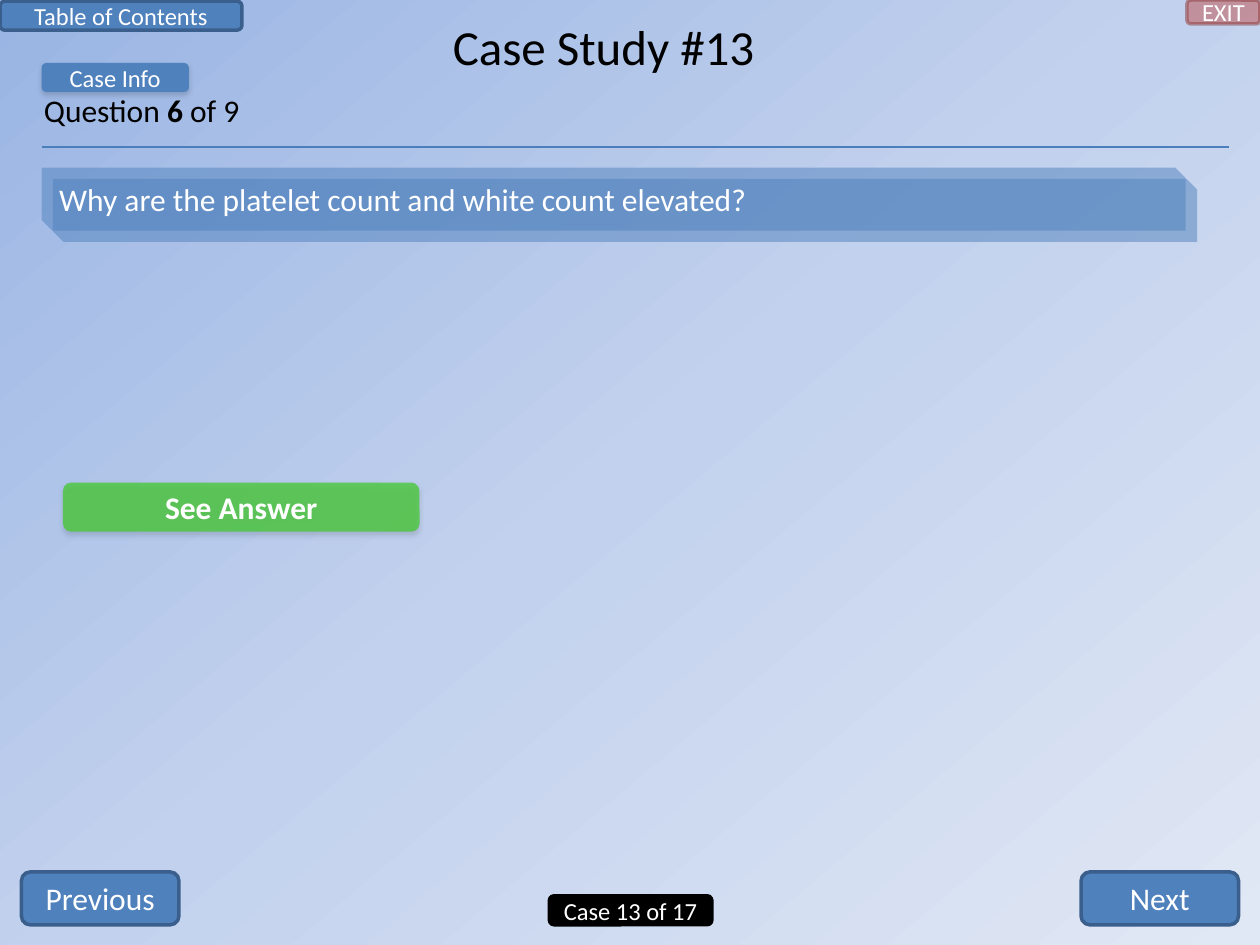
from copy import deepcopy
from lxml.etree import SubElement
from pptx import Presentation
from pptx.dml.color import RGBColor
from pptx.enum.shapes import MSO_CONNECTOR, MSO_SHAPE
from pptx.enum.text import MSO_ANCHOR, MSO_AUTO_SIZE, PP_ALIGN
from pptx.oxml.ns import qn
from pptx.util import Inches, Pt

THEME = {
    "font": "Calibri", "title": 28, "body": 18, "small": 14,
    "black": "000000", "white": "FFFFFF", "blue": "4F81BD", "blue edge": "3A5F8C",
    "rule": "4B7EBC", "red": "C0504D", "red edge": "8E3B39", "green": "48C937",
    "background": [(0, "9AB5E4"), (50, "C2D1ED"), (100, "E1E8F5")],
}


def write(frame, pieces, size, color, align=PP_ALIGN.CENTER):
    """Fill a frame with one paragraph of (text, bold) pieces."""
    para = frame.paragraphs[0]
    para.alignment = align
    for text, bold in pieces:
        span = para.add_run()
        span.text = text
        span.font.name, span.font.size = THEME["font"], Pt(THEME[size])
        span.font.bold = bold
        span.font.color.rgb = RGBColor.from_string(THEME[color])


def add_panel(kind, bounds, fill, edge=None, fill_alpha=100, edge_alpha=100, raised=False):
    """Add a preset shape, optionally see-through or with a soft shadow."""
    panel = page.shapes.add_shape(kind, *(Inches(length) for length in bounds))
    panel.shadow.inherit = False
    panel.fill.solid()
    panel.fill.fore_color.rgb = RGBColor.from_string(THEME[fill])
    if edge:
        panel.line.color.rgb = RGBColor.from_string(THEME[edge])
        panel.line.width = Pt(2)
    else:
        panel.line.fill.background()
    properties = panel.element.spPr
    for owner, alpha in ((properties, fill_alpha), (properties.find(qn("a:ln")), edge_alpha)):
        if alpha < 100:
            color = owner.find(qn("a:solidFill"))[0]
            SubElement(color, qn("a:alpha"), val=str(alpha * 1000))
    if raised:
        effects = properties.find(qn("a:effectLst"))
        shadow = SubElement(effects, qn("a:outerShdw"), blurRad=str(Pt(3.1)),
                            dist=str(Pt(1.8)), dir="5400000", rotWithShape="0")
        color = SubElement(shadow, qn("a:srgbClr"), val=THEME["black"])
        SubElement(color, qn("a:alpha"), val="16000")
    panel.text_frame.vertical_anchor = MSO_ANCHOR.MIDDLE
    return panel


deck = Presentation()
deck.slide_width, deck.slide_height = Inches(10), Inches(7.5)
page = deck.slides.add_slide(deck.slide_layouts[5])

# Background gradient
backdrop = page.background.fill
backdrop.gradient()
backdrop.gradient_angle = 310
stops = next(page.element.iter(qn("a:gsLst")))
stops.insert(1, deepcopy(stops[0]))
for stop, (position, color) in zip(backdrop.gradient_stops, THEME["background"]):
    stop.position = position / 100
    stop.color.rgb = RGBColor.from_string(color)

# Title
title = page.shapes.title
title.left, title.top = Inches(2.58), Inches(0.08)
title.width, title.height = Inches(4.42), Inches(0.57)
title.text_frame.auto_size = MSO_AUTO_SIZE.NONE
title.text_frame.vertical_anchor = MSO_ANCHOR.TOP
write(title.text_frame, [("Case Study #13", False)], "title", "black")

# Question counter and rule
counter = page.shapes.add_textbox(Inches(0.25), Inches(0.67), Inches(1.77), Inches(0.71))
counter.text_frame.word_wrap = False
write(counter.text_frame, [("Question ", False), ("6", True), (" of 9", False)],
      "body", "black", PP_ALIGN.LEFT)
rule = page.shapes.add_connector(MSO_CONNECTOR.STRAIGHT, Inches(0.33), Inches(1.17),
                                 Inches(9.75), Inches(1.17))
rule.line.color.rgb = RGBColor.from_string(THEME["rule"])
rule.line.width = Pt(1.25)
SubElement(rule.element.spPr, qn("a:effectLst"))

# Question on two overlapping panels
for left, top in ((0.42, 1.42), (0.33, 1.33)):
    question = add_panel(MSO_SHAPE.SNIP_2_DIAG_RECTANGLE, (left, top, 9.08, 0.5),
                         "blue", fill_alpha=50)
write(question.text_frame, [("Why are the platelet count and white count elevated?", False)],
      "body", "white", PP_ALIGN.LEFT)

# Buttons: label, bounds, text size, panel options
outlined = {"fill": "blue", "edge": "blue edge"}
buttons = [
    ("Previous", (0.17, 6.92, 1.25, 0.42), "body", outlined),
    ("Next", (8.58, 6.92, 1.25, 0.42), "body", outlined),
    ("EXIT", (9.42, 0, 0.58, 0.19), "small",
     {"fill": "red", "edge": "red edge", "fill_alpha": 50, "edge_alpha": 50}),
    ("Case 13 of 17", (4.36, 7.11, 1.29, 0.23), "small", {"fill": "black", "edge": "black"}),
    ("Case Info", (0.33, 0.5, 1.17, 0.23), "small", {"fill": "blue", "raised": True}),
    ("See Answer", (0.5, 3.83, 2.83, 0.39), "body",
     {"fill": "green", "fill_alpha": 78, "raised": True}),
    ("Table of Contents", (0, 0.01, 1.92, 0.23), "small", outlined),
]
for label, bounds, size, options in buttons:
    button = add_panel(MSO_SHAPE.ROUNDED_RECTANGLE, bounds, **options)
    write(button.text_frame, [(label, label == "See Answer")], size, "white")

deck.save("out.pptx")
